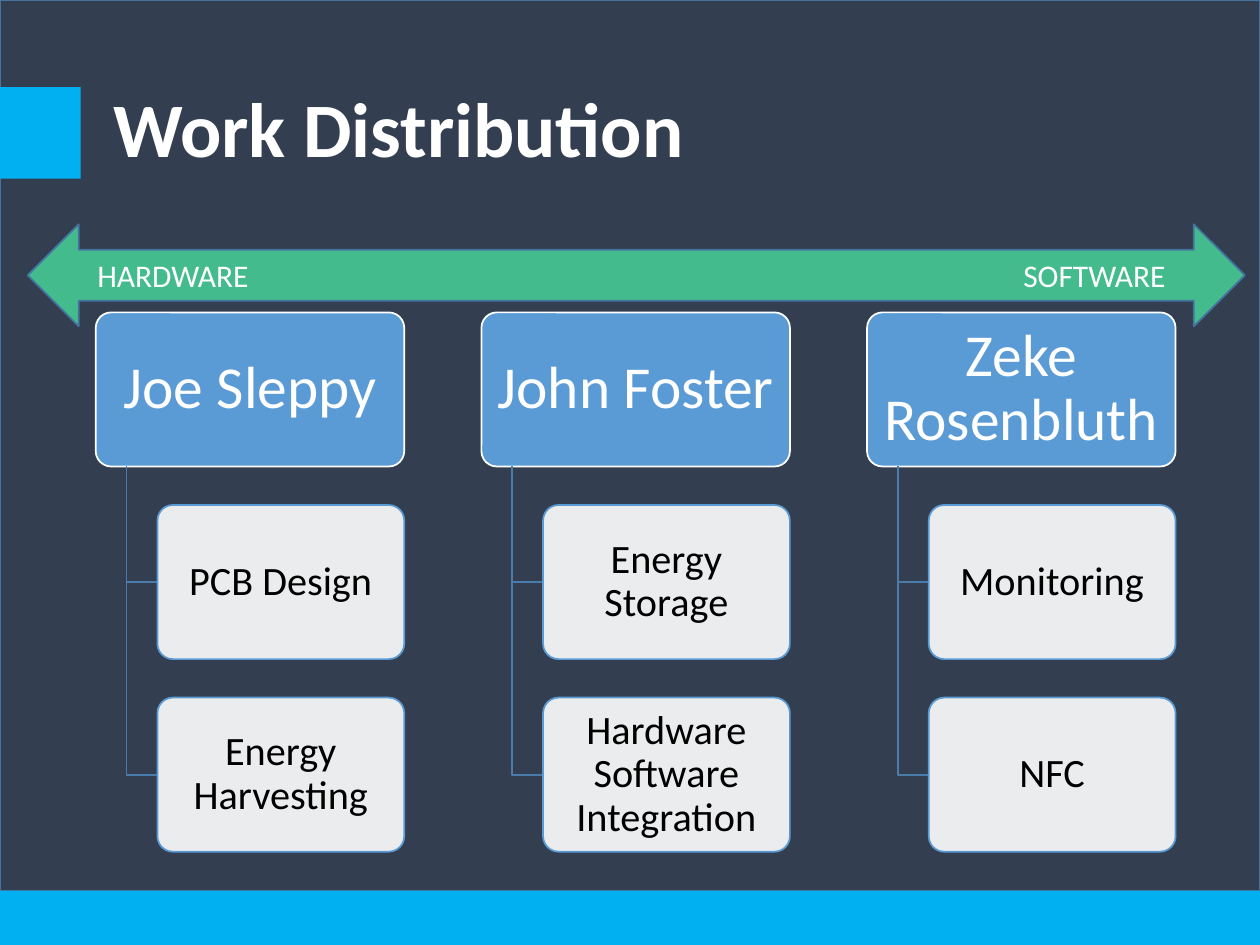
import pptx
import pptx.util
import pptx.dml.color
import pptx.enum.shapes
import pptx.enum.text
import pptx.oxml.ns
from lxml import etree

In = pptx.util.Inches
Pt = pptx.util.Pt
SHAPE = pptx.enum.shapes.MSO_SHAPE
ALIGN = pptx.enum.text.PP_ALIGN
MIDDLE = pptx.enum.text.MSO_ANCHOR.MIDDLE
qn = pptx.oxml.ns.qn

WIDTH, HEIGHT = 10, 7.5
COLORS = {
    "back": "333F50", "edge": "43739E", "accent": "00B0F0", "arrow": "43BB8D",
    "person": "5B9BD5", "branch": "497CAB", "white": "FFFFFF", "black": "000000",
}
TEAM = [
    ("Joe Sleppy", ["PCB Design", "Energy Harvesting"]),
    ("John Foster", ["Energy Storage", "Hardware Software Integration"]),
    ("Zeke Rosenbluth", ["Monitoring", "NFC"]),
]


def rgb(name):
    return pptx.dml.color.RGBColor.from_string(COLORS[name])


def style(sp, fill=None, line=None):
    sp.shadow.inherit = False
    if fill:
        sp.fill.solid()
        sp.fill.fore_color.rgb = rgb(fill)
    else:
        sp.fill.background()
    if line:
        sp.line.color.rgb = rgb(line)
        sp.line.width = Pt(1)
    else:
        sp.line.fill.background()


def add_box(s, kind, box, fill, line=None):
    sp = s.shapes.add_shape(kind, *[In(v) for v in box])
    style(sp, fill, line)
    return sp


def write(sp, text, size, color, align, spacing=1.0, bold=False):
    tf = sp.text_frame
    tf.word_wrap = True
    tf.vertical_anchor = MIDDLE
    p = tf.paragraphs[0]
    p.alignment = align
    p.line_spacing = spacing
    r = p.add_run()
    r.text = text
    r.font.name = "Calibri"
    r.font.size = Pt(size)
    r.font.bold = bold
    r.font.color.rgb = rgb(color)
    return p


def add_backdrop(s, box):
    x, y, w, h = box
    bar = 0.43
    panel = add_box(s, SHAPE.RECTANGLE, (x, y, w, h - bar), "back", "edge")
    s.shapes.title.element.addprevious(panel.element)
    add_box(s, SHAPE.RECTANGLE, (x, y + h - bar, w, bar), "accent")


def add_heading(s, box, text):
    x, y, w, h = box
    add_box(s, SHAPE.RECTANGLE, (x, y + h / 4, 0.64, h / 2), "accent")
    title = s.shapes.title
    title.left, title.top, title.width, title.height = [
        In(v) for v in (x + 0.8, y, w - 0.8, h)]
    write(title, text, 44, "white", ALIGN.LEFT, 0.9, True)


def add_card(s, box, text, size, fill, line, color, inset):
    sp = add_box(s, SHAPE.ROUNDED_RECTANGLE, box, fill, line)
    sp.adjustments[0] = 0.1
    tf = sp.text_frame
    tf.margin_left = tf.margin_right = In(inset)
    tf.margin_top = tf.margin_bottom = In(inset * 0.67)
    write(sp, text, size, color, ALIGN.CENTER, 0.9)
    return sp


def add_branch(s, x, top, right, bottom):
    fb = s.shapes.build_freeform(In(x), In(top), scale=1.0)
    fb.add_line_segments([(In(x), In(bottom)), (In(right), In(bottom))], close=False)
    style(fb.convert_to_shape(), line="branch")


def add_member(s, box, name, tasks):
    x, y, w, h = box
    card_h = h / 3.5
    pitch = card_h * 1.25
    add_card(s, (x, y, w, card_h), name, 34, "person", "white", "white", 0.07)
    for row, task in enumerate(tasks, 1):
        top = y + row * pitch
        add_branch(s, x + 0.1 * w, y + card_h, x + 0.2 * w, top + card_h / 2)
        sp = add_card(s, (x + 0.2 * w, top, 0.8 * w, card_h), task, 23,
                      "white", "person", "black", 0.05)
        color = sp.element.spPr.find(qn("a:solidFill"))[0]
        etree.SubElement(color, qn("a:alpha"), val="90000")


def add_team(s, box, team):
    x, y, w, h = box
    col_w = w / (1.25 * len(team) - 0.25)
    for col, (name, tasks) in enumerate(team):
        add_member(s, (x + col * col_w * 1.25, y, col_w, h), name, tasks)


def add_spectrum(s, box, left, right):
    sp = add_box(s, SHAPE.LEFT_RIGHT_ARROW, box, "arrow", "edge")
    sp.text_frame.margin_left = In(0.35)
    p = write(sp, f"{left}\t{right}", 18, "white", ALIGN.LEFT)
    tabs = etree.SubElement(p._p.get_or_add_pPr(), qn("a:tabLst"))
    etree.SubElement(tabs, qn("a:tab"), pos=str(In(8.48)), algn="r")


def main():
    prs = pptx.Presentation()
    prs.slide_width, prs.slide_height = In(WIDTH), In(HEIGHT)
    s = prs.slides.add_slide(prs.slide_layouts[5])
    add_backdrop(s, (0, 0, WIDTH, HEIGHT))
    add_heading(s, (0, 0.33, WIDTH, 1.45), "Work Distribution")
    add_team(s, (0.76, 2.48, 8.57, 4.28), TEAM)
    add_spectrum(s, (0.22, 1.78, 9.66, 0.81), "HARDWARE", "SOFTWARE")
    prs.save("out.pptx")


if __name__ == "__main__":
    main()
